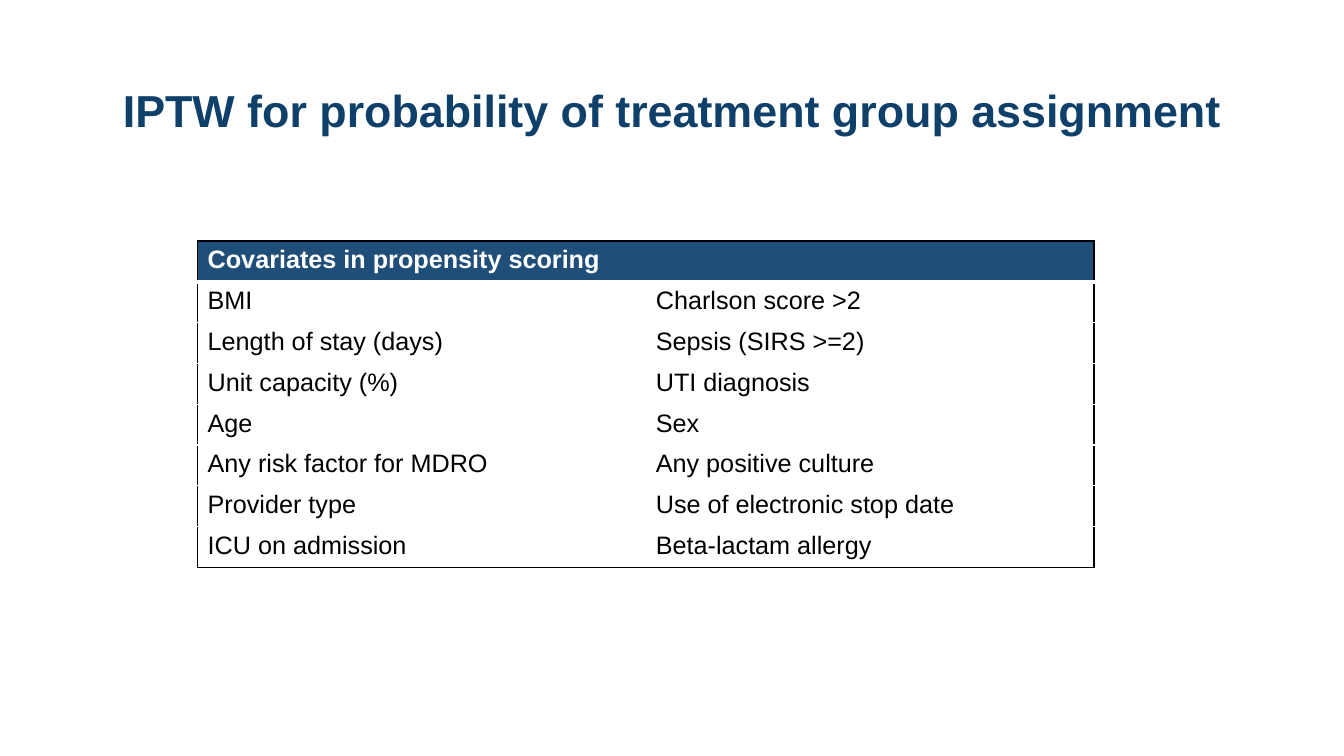
import dataclasses

import pptx
import pptx.dml.color
import pptx.enum.text
import pptx.oxml.ns
import pptx.util
from lxml import etree

Inches = pptx.util.Inches


@dataclasses.dataclass(frozen=True)
class Theme:
    font: str = "Arial"
    title_size: int = 32
    cell_size: int = 18
    title: str = "0F406A"
    header: str = "1F4E79"
    light: str = "FFFFFF"
    dark: str = "000000"


THEME = Theme()

TITLE = "IPTW for probability of treatment group assignment"
HEADER = "Covariates in propensity scoring"
COVARIATES = [
    ("BMI", "Charlson score >2"),
    ("Length of stay (days)", "Sepsis (SIRS >=2)"),
    ("Unit capacity (%)", "UTI diagnosis"),
    ("Age", "Sex"),
    ("Any risk factor for MDRO", "Any positive culture"),
    ("Provider type", "Use of electronic stop date"),
    ("ICU on admission", "Beta-lactam allergy"),
]


def rgb(value):
    return pptx.dml.color.RGBColor.from_string(value)


def write_text(text_frame, text, size, color, bold=False):
    paragraph = text_frame.paragraphs[0]
    run = paragraph.add_run()
    run.text = text
    font_format = {"name": THEME.font, "size": pptx.util.Pt(size), "bold": bold}
    for name, value in font_format.items():
        setattr(run.font, name, value)
    run.font.color.rgb = rgb(color)
    return paragraph


def add_title(slide):
    box = slide.shapes.add_textbox(Inches(0.92), Inches(0.4), Inches(11.5), Inches(1.45))
    frame_format = {
        "word_wrap": True,
        "vertical_anchor": pptx.enum.text.MSO_ANCHOR.MIDDLE,
    }
    for name, value in frame_format.items():
        setattr(box.text_frame, name, value)
    paragraph = write_text(box.text_frame, TITLE, THEME.title_size, THEME.title, bold=True)
    paragraph.alignment = pptx.enum.text.PP_ALIGN.CENTER
    paragraph.line_spacing = 0.9


def set_borders(cell, borders):
    """Draw cell borders from a dict of side: (colour, points)."""
    properties = cell._tc.get_or_add_tcPr()
    for side in "LRTB":
        color, width = borders[side]
        line = etree.SubElement(
            properties, pptx.oxml.ns.qn(f"a:ln{side}"), w=str(pptx.util.Pt(width))
        )
        fill = etree.SubElement(line, pptx.oxml.ns.qn("a:solidFill"))
        etree.SubElement(fill, pptx.oxml.ns.qn("a:srgbClr"), val=color)


def fill_cell(cell, color):
    cell.fill.solid()
    cell.fill.fore_color.rgb = rgb(color)


def add_covariate_table(slide):
    row_count, column_count = len(COVARIATES) + 1, 2
    table = slide.shapes.add_table(
        row_count, column_count, Inches(1.96), Inches(2.39), Inches(8.89), Inches(3.24)
    ).table
    table.first_row = table.horz_banding = False

    # Header across both columns
    table.cell(0, 0).merge(table.cell(0, 1))
    edge, inner = (THEME.dark, 1), (THEME.light, 1)
    for column in range(column_count):
        cell = table.cell(0, column)
        set_borders(cell, {"L": edge, "R": edge, "T": edge, "B": (THEME.light, 3)})
        fill_cell(cell, THEME.header)
    write_text(table.cell(0, 0).text_frame, HEADER, THEME.cell_size, THEME.light, bold=True)

    # Covariates, with dark lines on the outer edge only
    for row, names in enumerate(COVARIATES, start=1):
        for column, name in enumerate(names):
            cell = table.cell(row, column)
            set_borders(cell, {
                "L": edge if column == 0 else inner,
                "R": edge if column == column_count - 1 else inner,
                "T": (THEME.light, 3) if row == 1 else inner,
                "B": edge if row == row_count - 1 else inner,
            })
            fill_cell(cell, THEME.light)
            write_text(cell.text_frame, name, THEME.cell_size, THEME.dark)


def main():
    presentation = pptx.Presentation()
    presentation.slide_width = Inches(13.33)
    presentation.slide_height = Inches(7.5)
    slide = presentation.slides.add_slide(presentation.slide_layouts[6])
    add_title(slide)
    add_covariate_table(slide)
    presentation.save("out.pptx")


if __name__ == "__main__":
    main()
